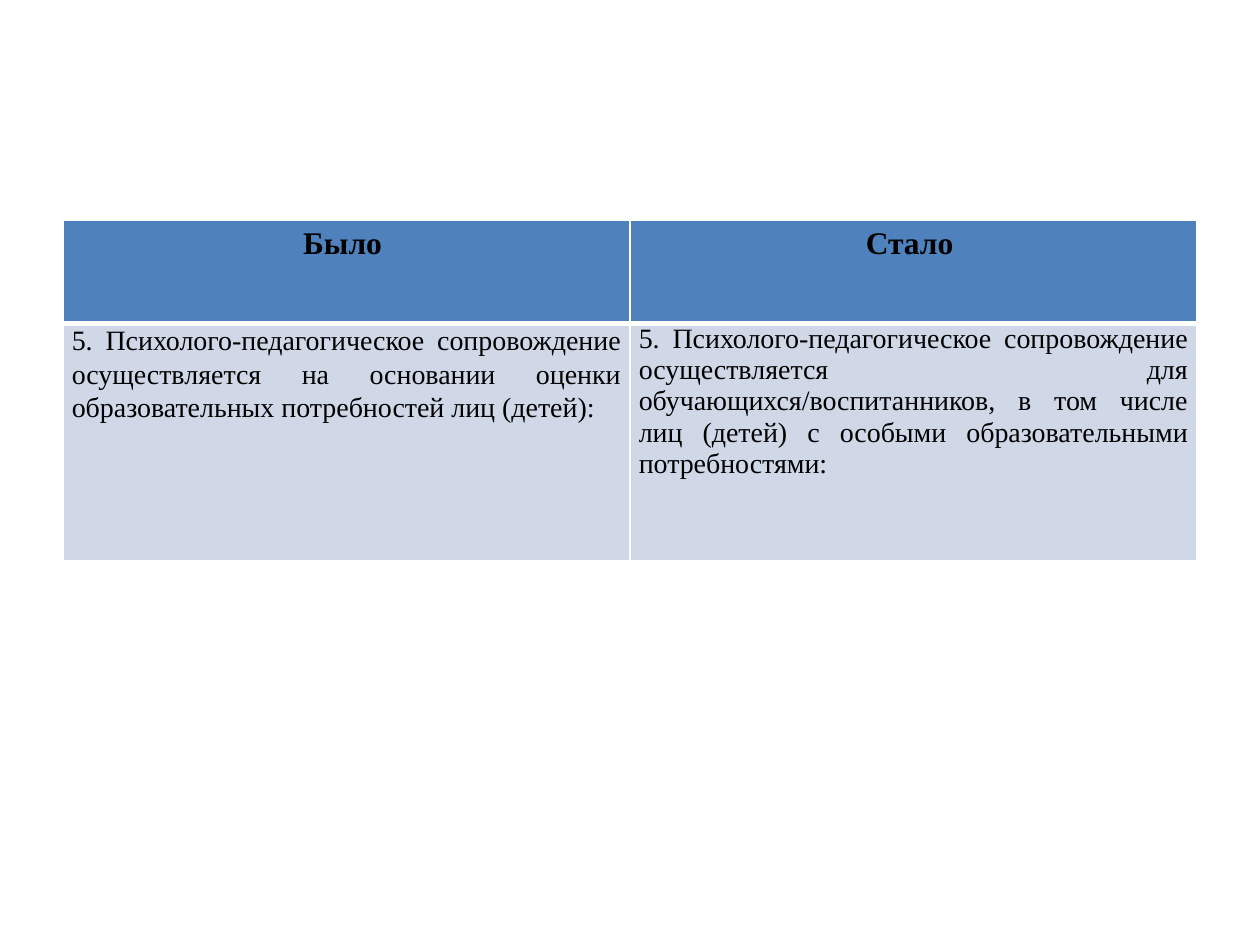
from dataclasses import dataclass

from lxml.etree import SubElement
from pptx import Presentation
from pptx.dml.color import RGBColor
from pptx.enum.text import PP_ALIGN as Align
from pptx.oxml.ns import qn
from pptx.table import _Cell as Cell
from pptx.util import Inches, Pt

COLORS = {"header": "4F81BD", "body": "D0D8E8", "border": "FFFFFF", "text": "000000"}
FONT = "Times New Roman"
THIN, THICK = 1, 3


@dataclass(frozen=True)
class RowStyle:
    fill: str
    size: int
    bold: bool
    align: Align
    margin_x: float
    margin_y: float
    top: int
    bottom: int


@dataclass(frozen=True)
class Entry:
    text: str
    line_spacing: float = 1.0


HEADER = RowStyle("header", 18, True, Align.CENTER, 0.1, 0.05, THIN, THICK)
BODY = RowStyle("body", 16, False, Align.JUSTIFY, 0.07, 0, THICK, THIN)

COMPARISON = [
    (HEADER, 0.82, [Entry("Было "), Entry("Стало ")]),
    (BODY, 1.88, [
        Entry("5. Психолого-педагогическое сопровождение осуществляется "
              "на основании оценки образовательных потребностей лиц (детей): ", 1.07),
        Entry("5. Психолого-педагогическое сопровождение осуществляется "
              "для обучающихся/воспитанников, в том числе лиц (детей) "
              "с особыми образовательными потребностями:"),
    ]),
]


def draw_borders(cell: Cell, style: RowStyle) -> None:
    properties = cell._tc.get_or_add_tcPr()
    widths = {"L": THIN, "R": THIN, "T": style.top, "B": style.bottom}
    for side, width in widths.items():
        line = SubElement(properties, qn(f"a:ln{side}"), w=str(Pt(width)))
        fill = SubElement(line, qn("a:solidFill"))
        SubElement(fill, qn("a:srgbClr"), val=COLORS["border"])


def fill_cell(cell: Cell, entry: Entry, style: RowStyle) -> None:
    draw_borders(cell, style)
    cell.fill.solid()
    cell.fill.fore_color.rgb = RGBColor.from_string(COLORS[style.fill])
    cell.margin_left = cell.margin_right = Inches(style.margin_x)
    cell.margin_top = cell.margin_bottom = Inches(style.margin_y)
    paragraph = cell.text_frame.paragraphs[0]
    paragraph.text = entry.text
    paragraph.alignment = style.align
    paragraph.line_spacing = entry.line_spacing
    font = paragraph.font
    font.name = FONT
    font.size = Pt(style.size)
    font.bold = style.bold
    font.color.rgb = RGBColor.from_string(COLORS["text"])


def main() -> None:
    deck = Presentation()
    deck.slide_width, deck.slide_height = Inches(10), Inches(7.5)
    slide = deck.slides.add_slide(deck.slide_layouts[6])
    side_margin = int(deck.slide_width * 0.05)
    table_width = deck.slide_width - 2 * side_margin
    table_height = Inches(sum(height for _, height, _ in COMPARISON))
    table = slide.shapes.add_table(
        len(COMPARISON), 2, side_margin, Inches(1.75), table_width, table_height
    ).table
    for row, (style, height, entries) in enumerate(COMPARISON):
        table.rows[row].height = Inches(height)
        for column, entry in enumerate(entries):
            fill_cell(table.cell(row, column), entry, style)
    deck.save("out.pptx")


if __name__ == "__main__":
    main()
